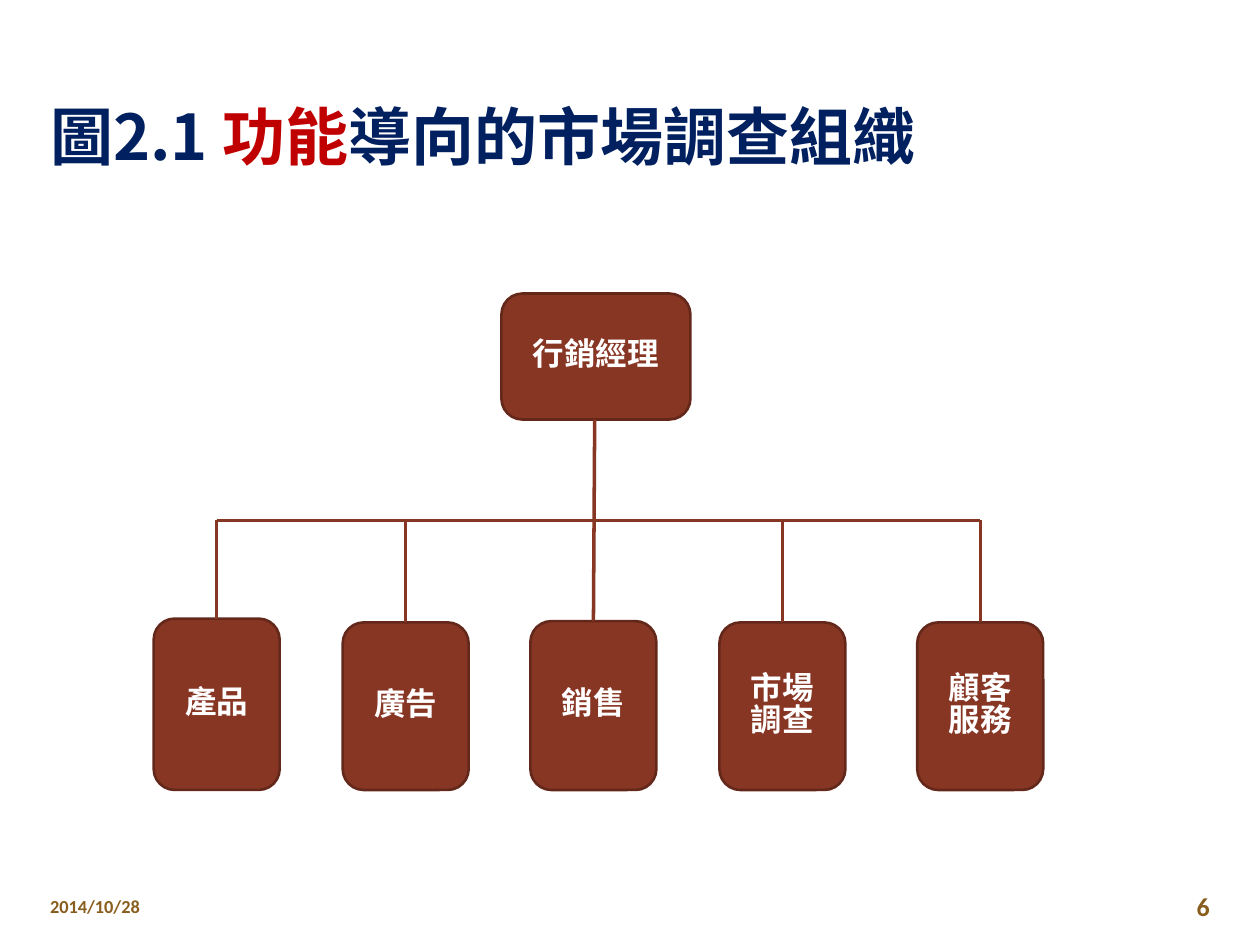
from dataclasses import dataclass

from lxml import etree
from pptx import Presentation
from pptx import util as u
from pptx.dml.color import RGBColor
from pptx.enum import shapes, text
from pptx.oxml.ns import qn


@dataclass(frozen=True)
class Theme:
    latin: str = "Calibri"
    cjk: str = "Noto Sans CJK SC"
    navy: str = "002060"
    red: str = "C00000"
    gold: str = "895D1D"
    brown: str = "873624"
    edge: str = "64281B"
    white: str = "FFFFFF"
    title_size: float = 36
    box_size: float = 18
    number_size: float = 14.8
    date_size: float = 10.5
    edge_width: float = 1.5
    line_width: float = 2


def color(value):
    return RGBColor.from_string(value)


def add_span(para, words, *, size, fill, font):
    span = para.add_run()
    span.text = words
    span.font.name = font
    span.font.size = u.Pt(size)
    span.font.bold = True
    span.font.color.rgb = color(fill)
    east_asian = etree.SubElement(span.font._element, qn("a:ea"))
    east_asian.set("typeface", font)


class Chart:
    def __init__(self, slide, theme):
        self.slide = slide
        self.theme = theme

    def label(self, place, spans, *, size, font, align=text.PP_ALIGN.LEFT,
              anchor=text.MSO_ANCHOR.MIDDLE, before=0):
        box = self.slide.shapes.add_textbox(*map(u.Inches, place))
        frame = box.text_frame
        frame.word_wrap = True
        frame.vertical_anchor = anchor
        para = frame.paragraphs[0]
        para.alignment = align
        para.space_before = u.Pt(before)
        for words, fill in spans:
            add_span(para, words, size=size, fill=fill, font=font)

    def unit(self, name, left, top, width, height):
        box = self.slide.shapes.add_shape(
            shapes.MSO_SHAPE.ROUNDED_RECTANGLE,
            *map(u.Inches, (left, top, width, height)))
        box.shadow.inherit = False
        box.fill.solid()
        box.fill.fore_color.rgb = color(self.theme.brown)
        box.line.color.rgb = color(self.theme.edge)
        box.line.width = u.Pt(self.theme.edge_width)
        frame = box.text_frame
        frame.word_wrap = True
        frame.vertical_anchor = text.MSO_ANCHOR.MIDDLE
        para = frame.paragraphs[0]
        para.alignment = text.PP_ALIGN.CENTER
        para.line_spacing = 0.83
        add_span(para, name, size=self.theme.box_size,
                 fill=self.theme.white, font=self.theme.cjk)

    def line(self, start, end):
        line = self.slide.shapes.add_connector(
            shapes.MSO_CONNECTOR.STRAIGHT, *map(u.Inches, (*start, *end)))
        line.line.color.rgb = color(self.theme.brown)
        line.line.width = u.Pt(self.theme.line_width)
        etree.SubElement(line._element.spPr, qn("a:effectLst"))


def main():
    deck = Presentation()
    deck.slide_width, deck.slide_height = u.Inches(10), u.Inches(7.5)
    theme = Theme()
    chart = Chart(deck.slides.add_slide(deck.slide_layouts[6]), theme)

    chart.label((0.3, 0.25, 9.4, 1.17),
                [("圖2.1 ", theme.navy), ("功能", theme.red),
                 ("導向的市場調查組織", theme.navy)],
                size=theme.title_size, font=theme.cjk,
                anchor=text.MSO_ANCHOR.BOTTOM, before=4)

    manager_bottom, bus, floor = 3.33, 4.13, 6.27
    chart.unit("行銷經理", 3.98, 2.33, 1.5, 1)
    departments = [("產品", 1.72, 4.91), ("廣告", 3.22, 4.94),
                   ("銷售", 4.71, 4.93), ("市場調查", 6.21, 4.94),
                   ("顧客服務", 7.78, 4.94)]
    for name, center, top in departments:
        chart.unit(name, center - 0.5, top, 1, floor - top)
        if name == "銷售":
            chart.line((4.72, manager_bottom), (center, top))
        else:
            chart.line((center, bus), (center, top))
    chart.line((departments[0][1], bus), (departments[-1][1], bus))

    chart.label((0.3, 7.03, 2.33, 0.32), [("2014/10/28", theme.gold)],
                size=theme.date_size, font=theme.latin)
    chart.label((8.74, 7.03, 0.96, 0.32), [("6", theme.gold)],
                size=theme.number_size, font=theme.latin,
                align=text.PP_ALIGN.RIGHT)
    deck.save("out.pptx")


if __name__ == "__main__":
    main()
